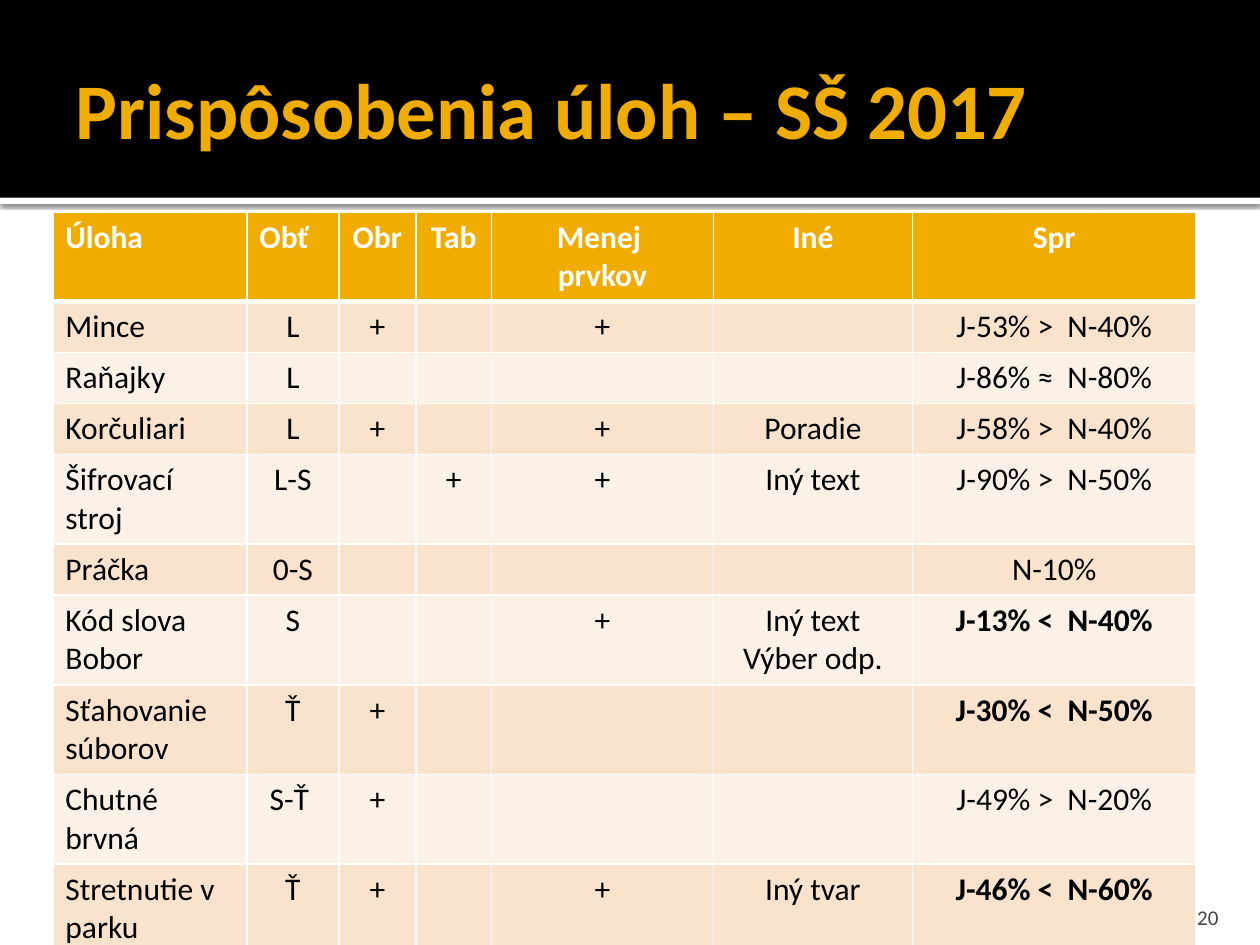
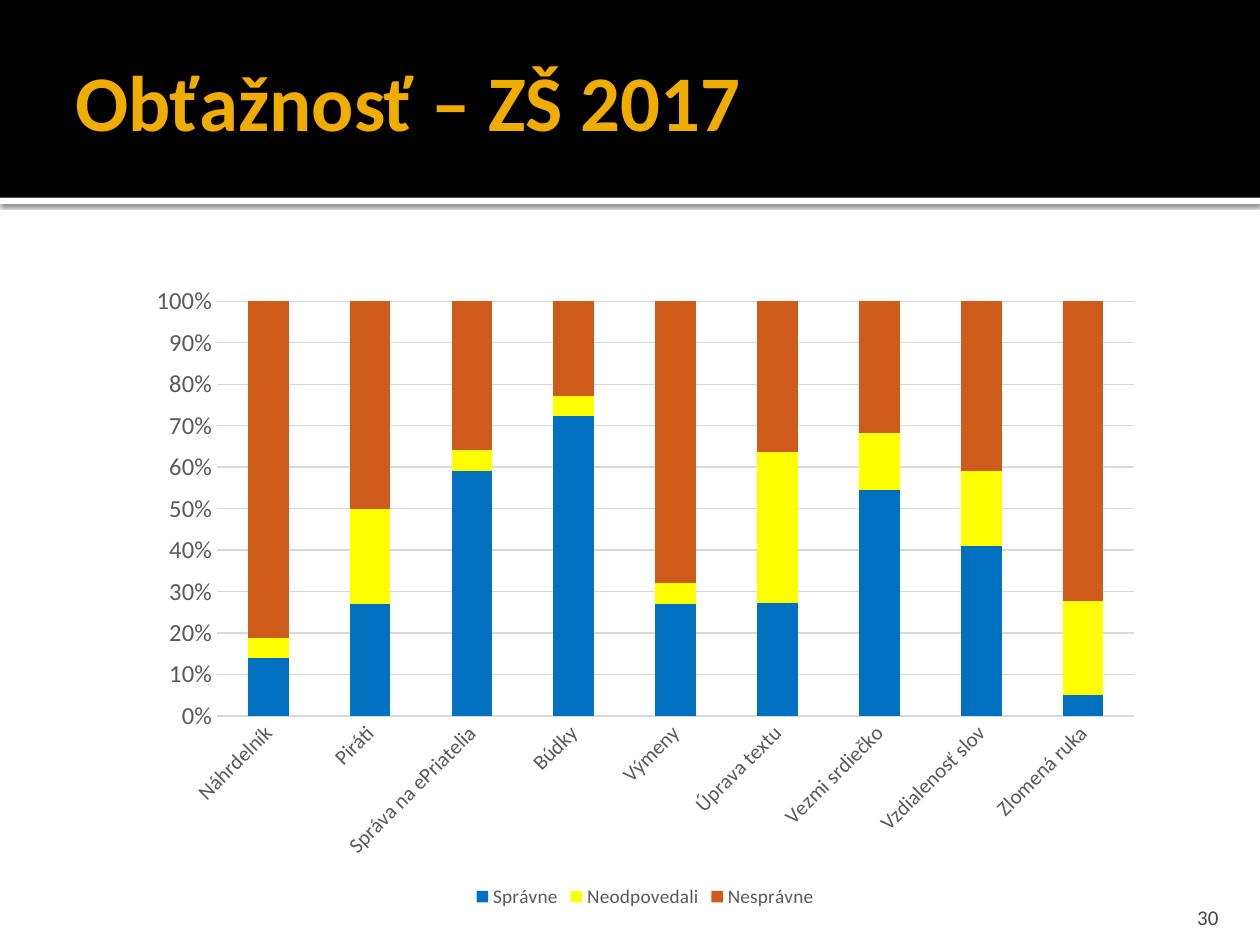
import dataclasses

import pptx
import pptx.chart.data
import pptx.dml.color
import pptx.enum.chart
import pptx.enum.shapes
import pptx.enum.text
import pptx.oxml
import pptx.oxml.ns
import pptx.util

Pt = pptx.util.Pt
Align = pptx.enum.text.PP_ALIGN
Anchor = pptx.enum.text.MSO_ANCHOR
Mark = pptx.enum.chart.XL_TICK_MARK
SPACE = pptx.oxml.ns.nsdecls("a")


@dataclasses.dataclass(frozen=True)
class Theme:
    font: str = "Calibri"
    gold: str = "F0AD00"
    black: str = "000000"
    white: str = "FFFFFF"
    odd: str = "F9E3CC"
    even: str = "FCF1E7"
    label: str = "595959"
    grid: str = "D9D9D9"
    page: str = "454545"
    series: tuple = ("0070C0", "FFFF00", "CF5B1B")
    title_size: int = 45
    cell_size: int = 18
    value_size: int = 14
    name_size: int = 12
    key_size: int = 11
    chart_size: int = 10
    page_size: int = 12


def color(code):
    return pptx.dml.color.RGBColor.from_string(code)


class Deck:
    def __init__(self, theme):
        self.theme = theme
        self.file = pptx.Presentation()
        self.file.slide_width, self.file.slide_height = Pt(720), Pt(540)
        self.slide = None

    def start(self, title, page, height):
        """Add a slide with the shared band, title and page number."""
        self.slide = self.file.slides.add_slide(self.file.slide_layouts[5])
        strip = self.band(113, 3.6, self.theme.white)
        strip._element.spPr.append(pptx.oxml.parse_xml(
            f'<a:effectLst {SPACE}><a:outerShdw blurRad="{Pt(2.5)}" dist="{Pt(0.8)}" '
            f'dir="5400000"><a:srgbClr val="{self.theme.black}"><a:alpha val="60000"/>'
            '</a:srgbClr></a:outerShdw></a:effectLst>'))
        self.band(0, 113, self.theme.black).shadow.inherit = False
        self.title(title, height)
        self.number(page)

    def band(self, top, height, fill):
        kind = pptx.enum.shapes.MSO_SHAPE.RECTANGLE
        band = self.slide.shapes.add_shape(kind, 0, Pt(top), Pt(720), Pt(height))
        band.fill.solid()
        band.fill.fore_color.rgb = color(fill)
        band.line.fill.background()
        return band

    def style(self, font, size, code, bold=False):
        font.name, font.size, font.bold = self.theme.font, Pt(size), bold
        font.color.rgb = color(code)

    def text(self, frame, words, size, code, align=Align.LEFT, bold=False):
        """Put each line of the words in a paragraph of its own."""
        for index, line in enumerate(words.split("\n")):
            para = frame.add_paragraph() if index else frame.paragraphs[0]
            para.alignment = align
            run = para.add_run()
            run.text = line
            self.style(run.font, size, code, bold)

    def place(self, shape, box, insets, anchor):
        shape.left, shape.top, shape.width, shape.height = map(Pt, box)
        frame = shape.text_frame
        frame.word_wrap = True
        frame.auto_size = pptx.enum.text.MSO_AUTO_SIZE.NONE
        frame.vertical_anchor = anchor
        (frame.margin_left, frame.margin_top,
         frame.margin_right, frame.margin_bottom) = map(Pt, insets)
        return frame

    def title(self, words, height):
        shape = self.slide.shapes.title
        self.slide.shapes.element.append(shape.element)  # above the band
        frame = self.place(shape, (36, 12.2, 648, height),
                           (7.2, 3.6, 3.6, 3.6), Anchor.MIDDLE)
        self.text(frame, words, self.theme.title_size, self.theme.gold, bold=True)

    def number(self, page):
        shape = self.slide.shapes.add_textbox(0, 0, 0, 0)
        frame = self.place(shape, (645.8, 509.8, 57.6, 21.6),
                           (7.2, 3.6, 7.2, 0), Anchor.BOTTOM)
        self.text(frame, str(page), self.theme.page_size, self.theme.page, Align.RIGHT)

    def border(self, cell, row):
        """Draw white cell edges, heavier below the header."""
        widths = {"L": 1, "R": 1, "T": 3 if row == 1 else 1, "B": 1 if row else 3}
        for side, width in widths.items():
            cell._tc.get_or_add_tcPr().append(pptx.oxml.parse_xml(
                f'<a:ln{side} {SPACE} w="{Pt(width)}"><a:solidFill>'
                f'<a:srgbClr val="{self.theme.white}"/></a:solidFill></a:ln{side}>'))

    def table(self, left, top, widths, height, rows, left_cells, bold_cells):
        look = self.theme
        table = self.slide.shapes.add_table(
            len(rows), len(widths), Pt(left), Pt(top),
            Pt(sum(widths)), Pt(height * len(rows))).table
        for column, width in zip(table.columns, widths):
            column.width = Pt(width)
        for r, texts in enumerate(rows):
            fill = (look.odd if r % 2 else look.even) if r else look.gold
            for c, words in enumerate(texts):
                cell = table.cell(r, c)
                self.border(cell, r)
                cell.fill.solid()
                cell.fill.fore_color.rgb = color(fill)
                if words:
                    flush = c == 0 or (r, c) in left_cells
                    self.text(cell.text_frame, words, look.cell_size,
                              look.black if r else look.white,
                              Align.LEFT if flush else Align.CENTER,
                              r == 0 or (r, c) in bold_cells)

    def chart(self, box, names, series):
        look = self.theme
        data = pptx.chart.data.CategoryChartData()
        data.categories = names
        for name, values in series.items():
            data.add_series(name, values)
        kind = pptx.enum.chart.XL_CHART_TYPE.COLUMN_STACKED_100
        chart = self.slide.shapes.add_chart(kind, *map(Pt, box), data).chart
        chart.has_title = False
        self.style(chart.font, look.chart_size, look.black)

        # Columns
        plot = chart.plots[0]
        plot.gap_width, plot.overlap, plot.vary_by_categories = 150, 100, False
        for item, code in zip(plot.series, look.series):
            item.format.fill.solid()
            item.format.fill.fore_color.rgb = color(code)

        # Axes
        base, scale = chart.category_axis, chart.value_axis
        for axis, size in ((base, look.name_size), (scale, look.value_size)):
            axis.major_tick_mark = axis.minor_tick_mark = Mark.NONE
            self.style(axis.tick_labels.font, size, look.label)
        base._element.xpath("c:txPr/a:bodyPr")[0].set("rot", "-2700000")
        scale.tick_labels.number_format = "0%"
        scale.tick_labels.number_format_is_linked = False
        scale.format.line.fill.background()
        scale.has_major_gridlines = True
        for line in (base.format.line, scale.major_gridlines.format.line):
            line.color.rgb = color(look.grid)
            line.width = Pt(0.75)

        # Legend
        chart.has_legend = True
        chart.legend.position = pptx.enum.chart.XL_LEGEND_POSITION.BOTTOM
        chart.legend.include_in_layout = False
        self.style(chart.legend.font, look.key_size, look.label)


def main():
    deck = Deck(Theme())

    # Task changes
    deck.start("Prispôsobenia úloh – SŠ 2017", 20, 98.6)
    tasks = [
        ("Úloha", "Obť", "Obr", "Tab", "Menej \nprvkov", "Iné", "Spr"),
        ("Mince", "L", "+", "", "+", "", "J-53% >  N-40%"),
        ("Raňajky", "L", "", "", "", "", "J-86% ≈  N-80%"),
        ("Korčuliari", "L", "+", "", "+", "Poradie", "J-58% >  N-40%"),
        ("Šifrovací stroj", "L-S", "", "+", "+", "Iný text", "J-90% >  N-50%"),
        ("Práčka", "0-S", "", "", "", "", "N-10%"),
        ("Kód slova Bobor", "S", "", "", "+", "Iný text\nVýber odp.", "J-13% <  N-40%"),
        ("Sťahovanie súborov", "Ť", "+", "", "", "", "J-30% <  N-50%"),
        ("Chutné brvná", "S-Ť ", "+", "", "", "", "J-49% >  N-20%"),
        ("Stretnutie v parku", "Ť", "+", "", "+", "Iný tvar", "J-46% <  N-60%"),
    ]
    better = {(r, 6) for r, task in enumerate(tasks) if "<" in task[6]}
    deck.table(30.2, 121, (110.9, 52.6, 44, 43.2, 126.8, 113.8, 162), 29.2,
               tasks, {(0, 1)}, better)

    # Difficulty
    deck.start("Obťažnosť – ZŠ 2017", 30, 90)
    names = ("Náhrdelník", "Piráti", "Správa na ePriatelia", "Búdky", "Výmeny",
             "Úprava textu", "Vezmi srdiečko", "Vzdialenosť slov", "Zlomená ruka")
    deck.chart((77.8, 156.2, 581.8, 365.8), names, {
        "Správne": (14, 27, 59, 73, 27, 27, 55, 41, 5),
        "Neodpovedali": (5, 23, 5, 5, 5, 36, 14, 18, 23),
        "Nesprávne": (82, 50, 36, 23, 68, 36, 32, 41, 73),
    })

    deck.file.save("out.pptx")


if __name__ == "__main__":
    main()
